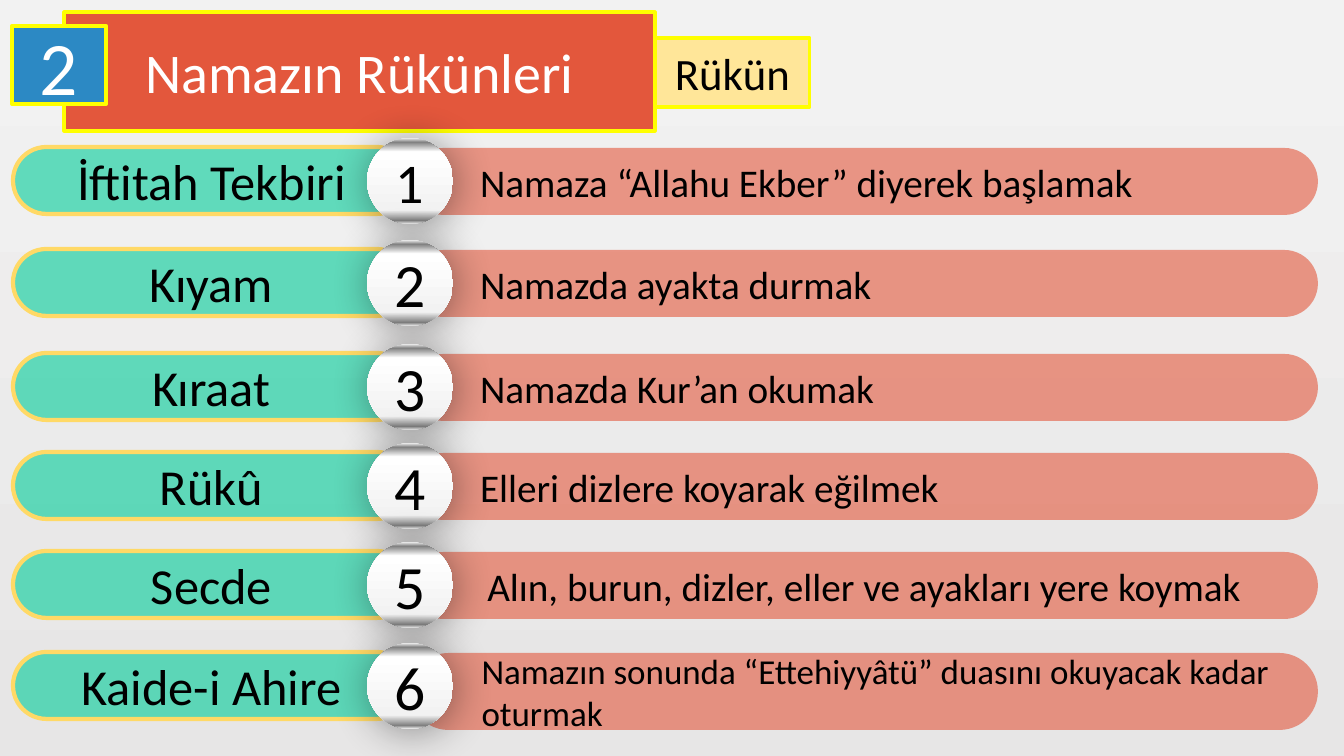
import pptx
import pptx.dml.color
import pptx.enum.shapes
import pptx.enum.text
import pptx.oxml
import pptx.oxml.ns
import pptx.util

RGBColor = pptx.dml.color.RGBColor
MSO_SHAPE = pptx.enum.shapes.MSO_SHAPE
PP_ALIGN = pptx.enum.text.PP_ALIGN
Pt = pptx.util.Pt
qn = pptx.oxml.ns.qn

SLIDE_WIDTH, SLIDE_HEIGHT = 1344, 756
EMU_PER_PX = 12192000 / SLIDE_WIDTH

BLACK = RGBColor(0x00, 0x00, 0x00)
WHITE = RGBColor(0xFF, 0xFF, 0xFF)
GREEN = RGBColor(0x00, 0xCC, 0x99)
RED = RGBColor(0xE3, 0x57, 0x3C)
BLUE = RGBColor(0x2C, 0x89, 0xC4)
CREAM = RGBColor(0xFF, 0xE6, 0x99)
GOLD = RGBColor(0xFF, 0xD9, 0x66)
YELLOW = RGBColor(0xFF, 0xFF, 0x00)
PALE_GRAY = RGBColor(0xF2, 0xF2, 0xF2)
WARM_GRAY = RGBColor(0xE7, 0xE6, 0xE6)
MID_GRAY = RGBColor(0x80, 0x80, 0x80)

BACKGROUND_STOPS = [(0, PALE_GRAY), (100, WARM_GRAY)]
METAL_STOPS = [(0, PALE_GRAY), (5, MID_GRAY), (16, WHITE),
               (84, PALE_GRAY), (96, MID_GRAY), (100, PALE_GRAY)]

# top, name, meaning, meaning size, meaning alignment, bar height, number size
ROWS = [
    (147, "İftitah Tekbiri", "Namaza “Allahu Ekber” diyerek başlamak", 28, PP_ALIGN.LEFT, 67, 40),
    (249, "Kıyam", "Namazda ayakta durmak", 28, PP_ALIGN.LEFT, 67, 44),
    (353, "Kıraat", "Namazda Kur’an okumak", 28, PP_ALIGN.LEFT, 67, 44),
    (452, "Rükû", "Elleri dizlere koyarak eğilmek", 28, PP_ALIGN.LEFT, 67, 44),
    (551, "Secde", "Alın, burun, dizler, eller ve ayakları yere koymak", 28, PP_ALIGN.CENTER, 67, 44),
    (652, "Kaide-i Ahire", "Namazın sonunda “Ettehiyyâtü” duasını okuyacak kadar oturmak",
     25, PP_ALIGN.LEFT, 77, 44),
]


def px(length):
    return pptx.util.Emu(round(length * EMU_PER_PX))


def set_text(shape, text, size, color=BLACK, alignment=PP_ALIGN.CENTER):
    frame = shape.text_frame
    frame_format = {"word_wrap": True, "auto_size": pptx.enum.text.MSO_AUTO_SIZE.NONE,
                    "vertical_anchor": pptx.enum.text.MSO_ANCHOR.MIDDLE}
    for name, value in frame_format.items():
        setattr(frame, name, value)
    frame.text = text
    paragraph = frame.paragraphs[0]
    paragraph.alignment = alignment
    font = paragraph.runs[0].font
    for name, value in {"name": "Calibri", "size": Pt(size), "bold": False}.items():
        setattr(font, name, value)
    font.color.rgb = color


def set_fill(shape, color, opacity=100):
    shape.fill.solid()
    shape.fill.fore_color.rgb = color
    if opacity < 100:
        color_element = shape._element.spPr.find(qn("a:solidFill")).find(qn("a:srgbClr"))
        alpha = pptx.oxml.parse_xml(
            f'<a:alpha {pptx.oxml.ns.nsdecls("a")} val="{opacity * 1000}"/>')
        color_element.append(alpha)


def set_outline(shape, color, width):
    shape.line.color.rgb = color
    shape.line.width = Pt(width)


def set_vertical_gradient(fill, owner, stops):
    """Run the (percent, color) stops from top to bottom of the owner."""
    fill.gradient()
    fill.gradient_angle = 270
    stop_list = next(owner.iter(qn("a:gsLst")))
    for stop in list(stop_list):
        stop_list.remove(stop)
    for percent, color in stops:
        stop_list.append(pptx.oxml.parse_xml(
            f'<a:gs {pptx.oxml.ns.nsdecls("a")} pos="{percent * 1000}">'
            f'<a:srgbClr val="{color}"/></a:gs>'))


def add_soft_shadow(shape):
    properties = shape._element.spPr
    properties.remove(properties.find(qn("a:effectLst")))
    properties.append(pptx.oxml.parse_xml(
        f'<a:effectLst {pptx.oxml.ns.nsdecls("a")}>'
        f'<a:outerShdw blurRad="{Pt(30)}" dist="{Pt(3)}" dir="2700000" algn="tl" rotWithShape="0">'
        f'<a:srgbClr val="{BLACK}"><a:alpha val="40000"/></a:srgbClr>'
        '</a:outerShdw></a:effectLst>'))


def add_plain_shape(slide, kind, left, top, width, height):
    shape = slide.shapes.add_shape(kind, px(left), px(top), px(width), px(height))
    shape.shadow.inherit = False
    shape.line.fill.background()
    return shape


def add_pill(slide, left, top, width, height, color):
    pill = add_plain_shape(slide, MSO_SHAPE.ROUNDED_RECTANGLE, left, top, width, height)
    pill.adjustments[0] = 0.5
    set_fill(pill, color, 60)
    return pill


def add_box(slide, left, top, width, height, color, outline_width):
    box = add_plain_shape(slide, MSO_SHAPE.RECTANGLE, left, top, width, height)
    set_fill(box, color)
    set_outline(box, YELLOW, outline_width)
    return box


def add_number_disc(slide, left, top, number, size):
    disc = add_plain_shape(slide, MSO_SHAPE.OVAL, left, top, 86, 86)
    set_vertical_gradient(disc.fill, disc._element, METAL_STOPS)
    add_soft_shadow(disc)
    set_text(disc, str(number), size)


def add_row(slide, number, row):
    top, name, meaning, meaning_size, alignment, bar_height, number_size = row
    name_pill = add_pill(slide, 13, top, 397, 67, GREEN)
    set_outline(name_pill, GOLD, 3)
    set_text(name_pill, name, 36)
    meaning_bar = add_pill(slide, 410, top + 1, 908, bar_height, RED)
    set_text(meaning_bar, meaning, meaning_size, alignment=alignment)
    if alignment == PP_ALIGN.LEFT:
        paragraph = meaning_bar.text_frame.paragraphs[0]
        paragraph.level = 1
        paragraph._p.get_or_add_pPr().set("marL", str(pptx.util.Inches(0.5)))
    add_number_disc(slide, 367, top - 9, number, number_size)


def format_title(slide):
    title = slide.shapes.title
    position = {"left": 64, "top": 12, "width": 591, "height": 119}
    for name, value in position.items():
        setattr(title, name, px(value))
    set_fill(title, RED)
    set_outline(title, YELLOW, 2.25)
    set_text(title, "Namazın Rükünleri", 40, WHITE)


def main():
    presentation = pptx.Presentation()
    presentation.slide_width = px(SLIDE_WIDTH)
    presentation.slide_height = px(SLIDE_HEIGHT)
    slide = presentation.slides.add_slide(presentation.slide_layouts[5])
    set_vertical_gradient(slide.background.fill, slide._element, BACKGROUND_STOPS)

    format_title(slide)
    section_badge = add_box(slide, 12, 26, 94, 78, BLUE, 3)
    set_text(section_badge, "2", 54, WHITE)
    term_label = add_box(slide, 655, 38, 155, 69, CREAM, 2.25)
    set_text(term_label, "Rükün", 32)

    for number, row in enumerate(ROWS, start=1):
        add_row(slide, number, row)

    presentation.save("out.pptx")


if __name__ == "__main__":
    main()
